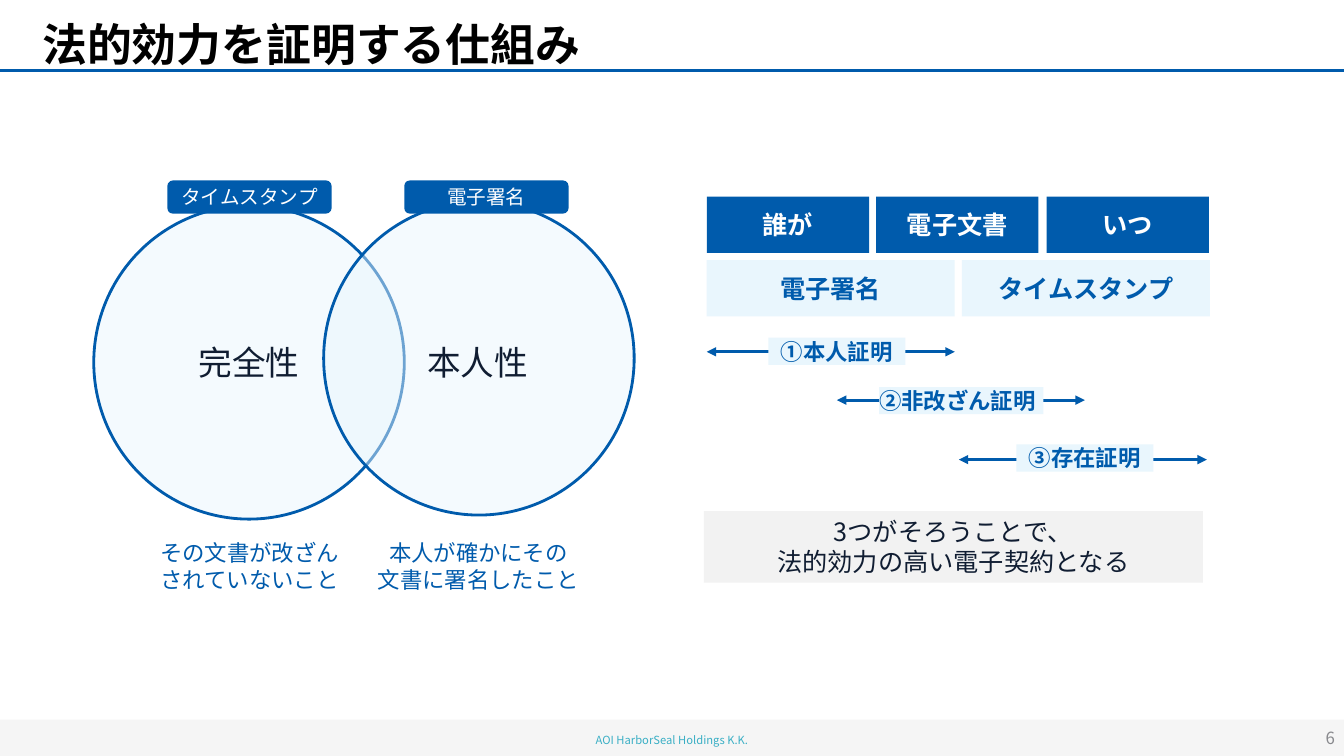
from dataclasses import dataclass

from lxml import etree
from pptx import Presentation
from pptx import util as u
from pptx.dml.color import RGBColor
from pptx.enum import shapes, text
from pptx.oxml.ns import qn

EMU_PER_PX = 9144  # 100 px to the inch
FONT = "Noto Sans CJK JP"
BLUE, PALE, NAVY, WHITE = "005BAC", "E9F6FD", "101D32", "FFFFFF"
LEFT, CENTER, RIGHT = text.PP_ALIGN.LEFT, text.PP_ALIGN.CENTER, text.PP_ALIGN.RIGHT
TOP, MIDDLE = text.MSO_ANCHOR.TOP, text.MSO_ANCHOR.MIDDLE
RECT = shapes.MSO_SHAPE.RECTANGLE
ROUNDED = shapes.MSO_SHAPE.ROUNDED_RECTANGLE


@dataclass(frozen=True)
class Box:
    left: int
    top: int
    width: int
    height: int

    def emu(self) -> list[int]:
        return [px(n) for n in (self.left, self.top, self.width, self.height)]


@dataclass(frozen=True)
class Style:
    size: int
    color: str
    bold: bool = False
    align: text.PP_ALIGN = CENTER
    anchor: text.MSO_ANCHOR = TOP
    margins: tuple[int, int] = (10, 5)
    spacing: float = 1.0


@dataclass(frozen=True)
class Quality:
    """One circle of the Venn diagram with its tab, name and explanation."""
    circle_left: int
    circle_top: int
    tab_left: int
    tab: str
    name_left: int
    name: str
    note_left: int
    note: tuple[str, str]


@dataclass(frozen=True)
class Proof:
    """A double arrow with a label on it."""
    arrow_left: int
    arrow_y: int
    label: str
    label_box: Box
    align: text.PP_ALIGN = CENTER


def px(n: int) -> u.Emu:
    return u.Emu(n * EMU_PER_PX)


def rgb(color: str) -> RGBColor:
    return RGBColor.from_string(color)


def write(shape, lines: tuple[str, ...], style: Style) -> None:
    frame = shape.text_frame
    frame.word_wrap = True
    frame.auto_size = text.MSO_AUTO_SIZE.NONE
    frame.vertical_anchor = style.anchor
    frame.margin_left = frame.margin_right = px(style.margins[0])
    frame.margin_top = frame.margin_bottom = px(style.margins[1])
    for index, line in enumerate(lines):
        paragraph = frame.add_paragraph() if index else frame.paragraphs[0]
        paragraph.alignment = style.align
        paragraph.line_spacing = style.spacing
        run = paragraph.add_run()
        run.text = line
        run.font.size = u.Pt(style.size)
        run.font.bold = style.bold
        run.font.color.rgb = rgb(style.color)
        run.font.name = FONT
        east_asian = etree.Element(qn("a:ea"), typeface=FONT)
        run.font._element.find(qn("a:latin")).addnext(east_asian)


def add_text(slide, box: Box, lines: tuple[str, ...], style: Style) -> None:
    write(slide.shapes.add_textbox(*box.emu()), lines, style)


def add_block(slide, kind: shapes.MSO_SHAPE, box: Box, fill: str):
    shape = slide.shapes.add_shape(kind, *box.emu())
    shape.shadow.inherit = False
    shape.fill.solid()
    shape.fill.fore_color.rgb = rgb(fill)
    shape.line.fill.background()
    return shape


def add_circle(slide, box: Box) -> None:
    circle = add_block(slide, shapes.MSO_SHAPE.OVAL, box, PALE)
    color = circle.fill._xPr.find(qn("a:solidFill"))[0]
    etree.SubElement(color, qn("a:alpha"), val="47000")
    circle.line.color.rgb = rgb(BLUE)
    circle.line.width = u.Pt(2)


def add_line(slide, left: int, y: int, width: int, arrows: bool = False) -> None:
    line = slide.shapes.add_connector(
        shapes.MSO_CONNECTOR.STRAIGHT, px(left), px(y), px(left + width), px(y))
    line.line.color.rgb = rgb(BLUE)
    line.line.width = u.Pt(2.25)
    if arrows:
        outline = line.line._get_or_add_ln()
        for end in ("a:headEnd", "a:tailEnd"):
            etree.SubElement(outline, qn(end), type="triangle")
    etree.SubElement(line._element.spPr, qn("a:effectLst"))


def add_row(slide, top: int, labels: tuple[str, ...], fill: str, color: str) -> None:
    """Share the width of the table evenly among the labels."""
    left, total, gap = 701, 498, 7
    width = (total - gap * (len(labels) - 1)) / len(labels)
    for index, label in enumerate(labels):
        box = Box(round(left + index * (width + gap)), top, round(width), 56)
        write(add_block(slide, RECT, box, fill), (label,),
              Style(18, color, bold=True, anchor=MIDDLE))


QUALITIES = (
    Quality(93, 204, 166, "タイムスタンプ", 187, "完全性",
            127, ("その文書が改ざん", "されていないこと")),
    Quality(321, 200, 401, "電子署名", 414, "本人性",
            354, ("本人が確かにその", "文書に署名したこと")),
)
PROOFS = (
    Proof(701, 349, "①本人証明", Box(762, 335, 136, 27)),
    Proof(830, 397, "②非改ざん証明", Box(872, 384, 163, 27), LEFT),
    Proof(951, 456, "③存在証明", Box(1008, 441, 136, 27)),
)


def main() -> None:
    presentation = Presentation()
    presentation.slide_width, presentation.slide_height = px(1333), px(750)
    slide = presentation.slides.add_slide(presentation.slide_layouts[5])

    # Title, rule and footer
    add_block(slide, RECT, Box(0, 714, 1333, 36), "F5F5F5")
    add_line(slide, 0, 70, 1333)
    add_text(slide, Box(534, 720, 265, 26), ("AOI HarborSeal Holdings K.K.",),
             Style(8, "3AAFC5", spacing=1.2))
    add_text(slide, Box(1274, 712, 60, 40), ("6",),
             Style(12, "88898D", align=RIGHT, anchor=MIDDLE))
    title = slide.shapes.title
    title.left, title.top, title.width, title.height = Box(32, 9, 1121, 68).emu()
    write(title, ("法的効力を証明する仕組み",),
          Style(32, "000000", bold=True, align=LEFT, anchor=MIDDLE))

    # Venn diagram: circles first, then everything on top of them
    for quality in QUALITIES:
        add_circle(slide, Box(quality.circle_left, quality.circle_top, 308, 311))
    for quality in QUALITIES:
        add_text(slide, Box(quality.name_left, 334, 121, 50), (quality.name,),
                 Style(24, NAVY, align=LEFT))
        add_text(slide, Box(quality.note_left, 530, 241, 64), quality.note,
                 Style(16, BLUE))
        tab = add_block(slide, ROUNDED, Box(quality.tab_left, 179, 163, 33), BLUE)
        tab.adjustments[0] = 0.17
        write(tab, (quality.tab,), Style(14, WHITE, anchor=MIDDLE))

    # Questions and the techniques that answer them
    add_row(slide, 195, ("誰が", "電子文書", "いつ"), BLUE, WHITE)
    add_row(slide, 258, ("電子署名", "タイムスタンプ"), PALE, BLUE)

    # Proofs
    for proof in PROOFS:
        add_line(slide, proof.arrow_left, proof.arrow_y, 246, arrows=True)
        write(add_block(slide, RECT, proof.label_box, PALE), (proof.label,),
              Style(16, BLUE, bold=True, align=proof.align, margins=(0, 0)))

    # Conclusion
    write(add_block(slide, RECT, Box(698, 507, 495, 71), "F2F2F2"),
          ("3つがそろうことで、", "法的効力の高い電子契約となる"), Style(18, NAVY))

    presentation.save("out.pptx")


if __name__ == "__main__":
    main()
